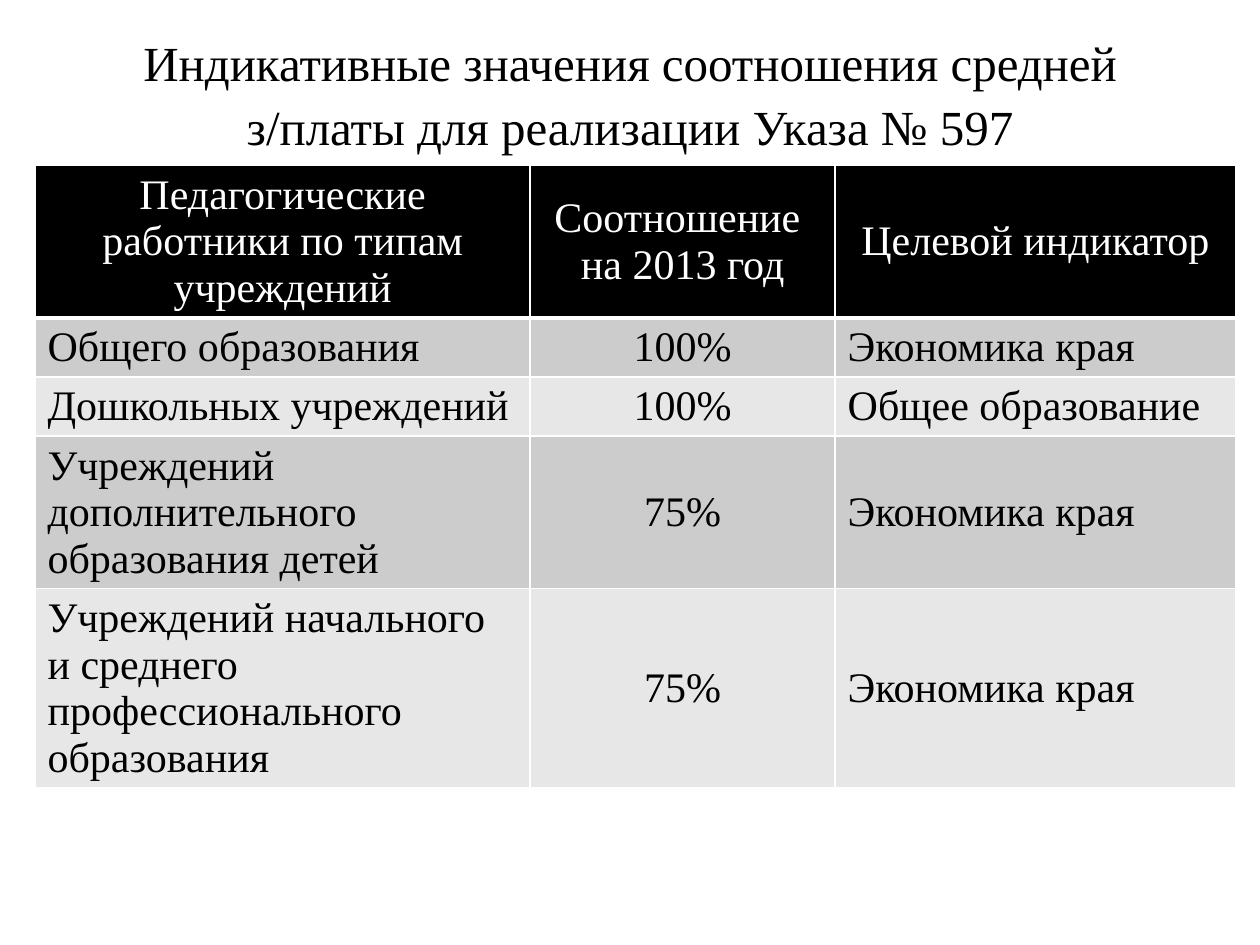
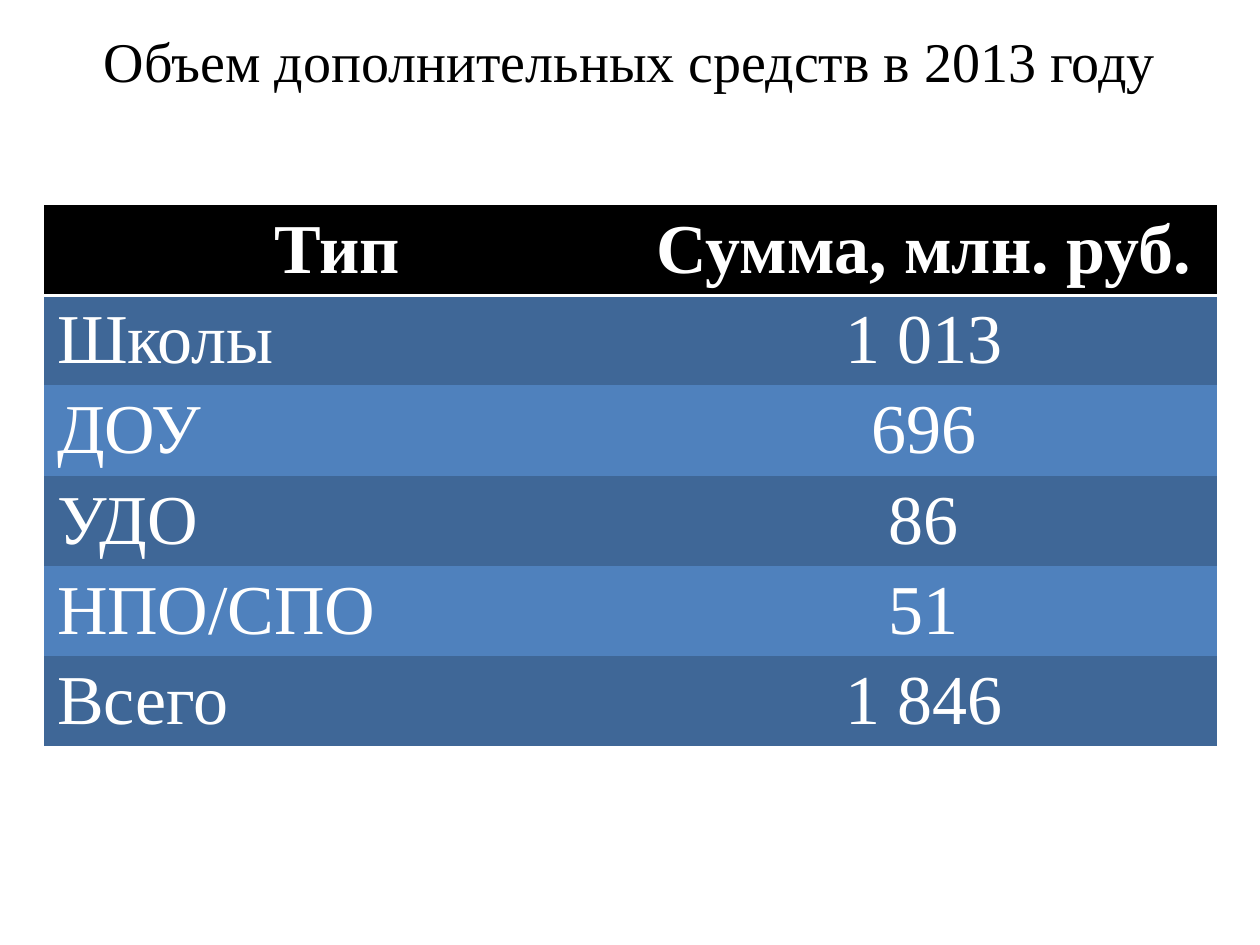
from lxml.etree import SubElement
from pptx import Presentation
from pptx.dml.color import RGBColor
from pptx.enum.text import MSO_ANCHOR as Anchor, PP_ALIGN as Align
from pptx.oxml.ns import qn
from pptx.util import Pt

FONT = "Times New Roman"
BLACK = RGBColor(0x00, 0x00, 0x00)
WHITE = RGBColor(0xFF, 0xFF, 0xFF)
GREYS = (RGBColor(0xCC, 0xCC, 0xCC), RGBColor(0xE7, 0xE7, 0xE7))
BLUES = (RGBColor(0x3F, 0x67, 0x97), RGBColor(0x4F, 0x81, 0xBD))
NO_STYLE = "{2D5ABB26-0587-4C30-8999-92F81FD0307C}"
LINE_HEIGHT = 1.11  # height of a text line relative to the font size
CELL_PADDING = 7.2  # top and bottom cell margins together

RATIO_ROWS = [
    ("Педагогические работники по типам учреждений",
     "Соотношение \vна 2013 год", "Целевой индикатор"),
    ("Общего образования", "100%", "Экономика края"),
    ("Дошкольных учреждений", "100%", "Общее образование"),
    ("Учреждений дополнительного образования детей", "75%", "Экономика края"),
    ("Учреждений начального и среднего профессионального образования",
     "75%", "Экономика края"),
]
FUNDS_ROWS = [
    ("Тип", "Сумма, млн. руб."),
    ("Школы", "1 013"),
    ("ДОУ", "696"),
    ("УДО", "86"),
    ("НПО/СПО", "51"),
    ("Всего", "1 846"),
]


def format_text(tf, size, color, align, bold=False):
    for p in tf.paragraphs:
        p.alignment = align
        for r in p.runs:
            r.font.name = FONT
            r.font.size = Pt(size)
            r.font.bold = bold
            r.font.color.rgb = color


def set_border(cell, widths):
    """Draw white cell borders; widths maps a side (L, R, T, B) to points."""
    tc_pr = cell._tc.get_or_add_tcPr()
    for i, side in enumerate(s for s in "LRTB" if s in widths):
        ln = SubElement(tc_pr, qn(f"a:ln{side}"), w=str(Pt(widths[side])))
        fill = SubElement(ln, qn("a:solidFill"))
        SubElement(fill, qn("a:srgbClr"), val=str(WHITE))
        tc_pr.insert(i, ln)  # borders come before the fill


def add_title_slide(prs, title, box, size, spacing=1.0):
    s = prs.slides.add_slide(prs.slide_layouts[5])
    sp = s.shapes.title
    sp.left, sp.top, sp.width, sp.height = map(Pt, box)
    tf = sp.text_frame
    tf.text = title
    tf.word_wrap = True
    tf.vertical_anchor = Anchor.MIDDLE
    tf.paragraphs[0].line_spacing = spacing
    format_text(tf, size, BLACK, Align.CENTER)
    return s


def add_banded_table(s, rows, origin, col_widths, line_counts, size, bands,
                     body_color, anchor, head_bold, head_border, body_border):
    heights = [n * size * LINE_HEIGHT + CELL_PADDING for n in line_counts]
    left, top = origin
    frame = s.shapes.add_table(len(rows), len(col_widths), Pt(left), Pt(top),
                               Pt(sum(col_widths)), Pt(sum(heights)))
    table = frame.table
    table._tbl.tblPr.find(qn("a:tableStyleId")).text = NO_STYLE
    for col, width in zip(table.columns, col_widths):
        col.width = Pt(width)
    for i, (row, height, texts) in enumerate(zip(table.rows, heights, rows)):
        row.height = Pt(height)
        head = i == 0
        for j, (cell, text) in enumerate(zip(row.cells, texts)):
            cell.text_frame.text = text
            cell.vertical_anchor = anchor
            cell.fill.solid()
            cell.fill.fore_color.rgb = BLACK if head else bands[(i - 1) % 2]
            # The header and the second column are centred
            align = Align.CENTER if head or j == 1 else Align.LEFT
            format_text(cell.text_frame, size, WHITE if head else body_color,
                        align, head and head_bold)
            set_border(cell, head_border if head else body_border)


def build_ratio_slide(prs):
    s = add_title_slide(
        prs, "Индикативные значения соотношения средней "
        "з/платы для реализации Указа № 597", (36, 21.6, 648, 61.2), 28, 1.09)
    grid = dict.fromkeys("LRTB", 1)
    add_banded_table(s, RATIO_ROWS, (20, 94.5), (283, 174.2, 229),
                     (3, 1, 1, 3, 4), 24, GREYS, BLACK, Anchor.MIDDLE,
                     False, {**grid, "B": 3}, grid)


def build_funds_slide(prs):
    s = add_title_slide(prs, "Объем дополнительных средств в 2013 году",
                        (36, 15.1, 648, 38.9), 32)
    add_banded_table(s, FUNDS_ROWS, (25.4, 117), (335, 335),
                     [1] * len(FUNDS_ROWS), 40, BLUES, WHITE, Anchor.TOP,
                     True, {"B": 2}, {})


def main():
    prs = Presentation()
    prs.slide_width, prs.slide_height = Pt(720), Pt(540)
    build_ratio_slide(prs)
    build_funds_slide(prs)
    prs.save("out.pptx")


if __name__ == "__main__":
    main()
